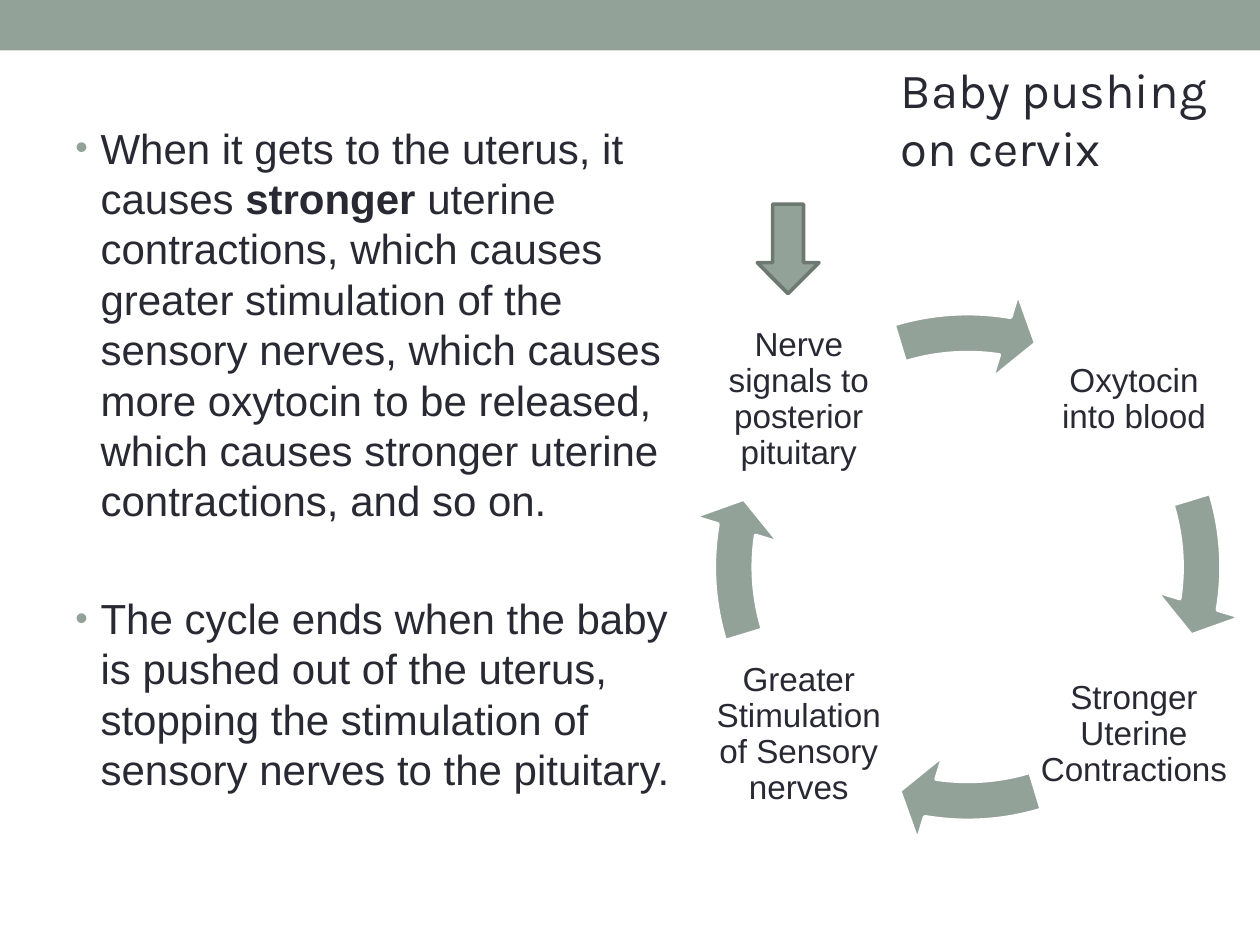
"""Slide on the positive feedback cycle of oxytocin during birth."""
from lxml import etree
from pptx import Presentation
from pptx.dml.color import RGBColor
from pptx.enum.shapes import MSO_SHAPE
from pptx.enum.text import MSO_ANCHOR, PP_ALIGN
from pptx.oxml.ns import qn
from pptx.util import Inches, Pt

RECTANGLE = MSO_SHAPE.RECTANGLE
CIRCULAR_ARROW = MSO_SHAPE.CIRCULAR_ARROW
DOWN_ARROW = MSO_SHAPE.DOWN_ARROW
MIDDLE = MSO_ANCHOR.MIDDLE
CENTER = PP_ALIGN.CENTER
COLORS = {"sage": "93A299", "edge": "6D7871", "ink": "292934", "white": "FFFFFF"}

prs = Presentation()
prs.slide_width, prs.slide_height = Inches(10), Inches(7.5)
slide = prs.slides.add_slide(prs.slide_layouts[6])


def add_figure(kind, left, top, width, height, edge=None):
    figure = slide.shapes.add_shape(
        kind, Inches(left), Inches(top), Inches(width), Inches(height))
    figure.shadow.inherit = False
    figure.fill.solid()
    figure.fill.fore_color.rgb = RGBColor.from_string(COLORS["sage"])
    if edge:
        figure.line.color.rgb = RGBColor.from_string(COLORS[edge])
        figure.line.width = Pt(2.08)
    else:
        figure.line.fill.background()
    return figure


def add_run(paragraph, text, size, font="Arial", bold=False):
    run = paragraph.add_run()
    run.text = text
    run.font.size = Pt(size)
    run.font.name = font
    run.font.bold = bold
    run.font.color.rgb = RGBColor.from_string(COLORS["ink"])


add_figure(RECTANGLE, 0, 0, 10, 0.4)

explanation = slide.shapes.add_textbox(
    Inches(0.5), Inches(0.92), Inches(4.97), Inches(6.07)).text_frame
explanation.word_wrap = True
points = [
    (4.8, [("When it gets to the uterus, it causes ", False),
           ("stronger", True),
           (" uterine contractions, which causes greater stimulation of the "
            "sensory nerves, which causes more oxytocin to be released, which "
            "causes stronger uterine contractions, and so on.", False)]),
    (38.4, [("The cycle ends when the baby is pushed out of the uterus, stopping "
             "the stimulation of sensory nerves to the pituitary.", False)]),
]
for index, (space_before, pieces) in enumerate(points):
    point = explanation.add_paragraph() if index else explanation.paragraphs[0]
    point.space_before = Pt(space_before)
    for text, bold in pieces:
        add_run(point, text, 24, bold=bold)
    properties = point._p.get_or_add_pPr()
    properties.set("marL", str(Inches(0.2)))
    properties.set("indent", str(Inches(-0.2)))
    bullet_color = etree.SubElement(properties, qn("a:buClr"))
    etree.SubElement(bullet_color, qn("a:srgbClr")).set("val", COLORS["sage"])
    etree.SubElement(properties, qn("a:buSzPct")).set("val", "85000")
    etree.SubElement(properties, qn("a:buFont")).set("typeface", "Arial")
    etree.SubElement(properties, qn("a:buChar")).set("char", "•")

LEFT, RIGHT, UPPER, LOWER = 5.56, 8.22, 2.39, 5.05
stages = [
    ("Oxytocin into blood", RIGHT, UPPER),
    ("Stronger Uterine Contractions", RIGHT, LOWER),
    ("Greater Stimulation of Sensory nerves", LEFT, LOWER),
    ("Nerve signals to posterior pituitary", LEFT, UPPER),
]
QUARTER_TURN, FULL_TURN = 54, 216
for index, (text, left, top) in enumerate(stages):
    stage = slide.shapes.add_textbox(
        Inches(left), Inches(top), Inches(1.56), Inches(1.56)).text_frame
    stage.word_wrap = True
    stage.vertical_anchor = MIDDLE
    stage.margin_left = stage.margin_right = Inches(0.03)
    stage.margin_top = stage.margin_bottom = Inches(0.03)
    stage.paragraphs[0].alignment = CENTER
    stage.paragraphs[0].line_spacing = 0.9
    add_run(stage.paragraphs[0], text, 19)

    cycle_arrow = add_figure(CIRCULAR_ARROW, 5.47, 2.29, 4.42, 4.42, "white")
    turn = index * QUARTER_TURN
    angles = [0.07, 4.65, 5.5 + turn, (205.85 + turn) % FULL_TURN, 0.08]
    for position, value in enumerate(angles):
        cycle_arrow.adjustments[position] = value

add_figure(DOWN_ARROW, 6.01, 1.62, 0.49, 0.71, "edge")

trigger = slide.shapes.add_textbox(
    Inches(7.05), Inches(0.42), Inches(2.99), Inches(1.04)).text_frame
trigger.word_wrap = True
add_run(trigger.paragraphs[0], "Baby pushing on cervix", 28, "Karla")

prs.save("out.pptx")
